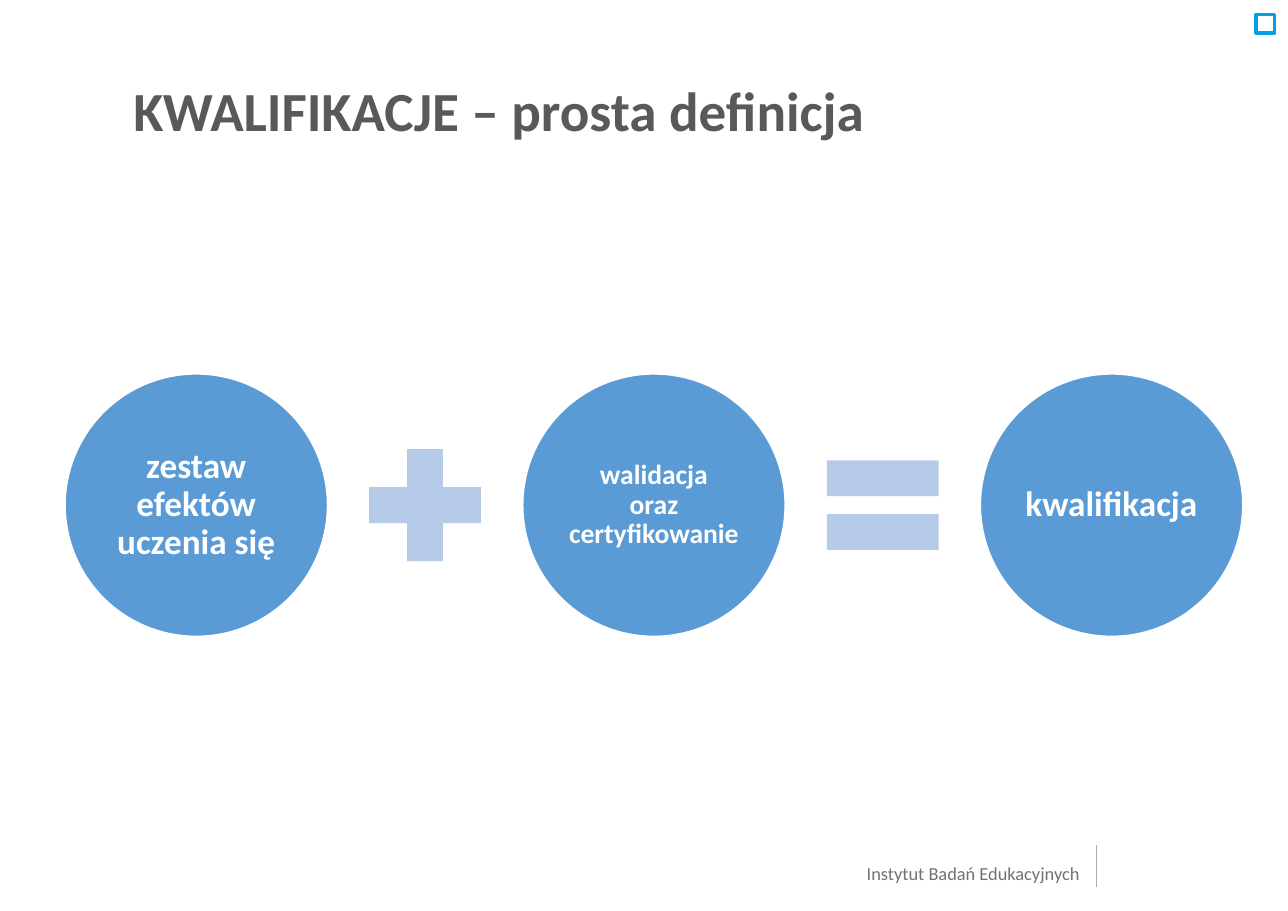
from dataclasses import dataclass

from pptx import Presentation
from pptx.dml.color import RGBColor
from pptx.enum.shapes import MSO_CONNECTOR, MSO_SHAPE
from pptx.enum.text import MSO_ANCHOR, MSO_AUTO_SIZE, PP_ALIGN
from pptx.oxml.ns import qn
from pptx.shapes.autoshape import Shape
from pptx.slide import Slide
from pptx.text.text import TextFrame
from pptx.util import Inches, Pt

OVAL, RECT = MSO_SHAPE.OVAL, MSO_SHAPE.RECTANGLE
PLUS, EQUAL = MSO_SHAPE.MATH_PLUS, MSO_SHAPE.MATH_EQUAL
LEFT, CENTER = PP_ALIGN.LEFT, PP_ALIGN.CENTER
TOP, MIDDLE = MSO_ANCHOR.TOP, MSO_ANCHOR.MIDDLE

FONT = "Calibri"
COLORS = {
    "title": "595959",
    "term": "5B9BD5",
    "sign": "B5CBE7",
    "white": "FFFFFF",
    "mark": "00A1E4",
    "footer": "767171",
    "rule": "AFABAB",
}

# Equation row: circles at an equal pitch, signs midway between them
START, PITCH, MID = 0.59, 4.15, 4.58
TERM, SIGN = 2.38, 1.38


@dataclass
class Term:
    lines: list[str]
    size: float


@dataclass
class Style:
    size: float
    color: str
    bold: bool = False
    align: PP_ALIGN = LEFT
    anchor: MSO_ANCHOR = TOP
    space: float = 0.9


TERMS = [
    Term(["zestaw efektów uczenia się"], 23),
    Term(["walidacja", "oraz", "certyfikowanie"], 18),
    Term(["kwalifikacja"], 23),
]
SIGNS = [PLUS, EQUAL]


def rgb(name: str) -> RGBColor:
    return RGBColor.from_string(COLORS[name])


def write(frame: TextFrame, lines: list[str], style: Style, wrap: bool = True) -> None:
    frame.word_wrap = wrap
    frame.auto_size = MSO_AUTO_SIZE.NONE
    frame.vertical_anchor = style.anchor
    frame.margin_left = frame.margin_right = 0
    frame.margin_top = frame.margin_bottom = 0
    para = frame.paragraphs[0]
    para.alignment = style.align
    para.line_spacing = style.space
    for i, line in enumerate(lines):
        if i:
            para.add_line_break()
        run = para.add_run()
        run.text = line
        run.font.name = FONT
        run.font.size = Pt(style.size)
        run.font.bold = style.bold
        run.font.color.rgb = rgb(style.color)


def draw(slide: Slide, kind: MSO_SHAPE, left: float, top: float, side: float,
         fill: str, line: str = "", width: float = 1) -> Shape:
    shape = slide.shapes.add_shape(
        kind, Inches(left), Inches(top), Inches(side), Inches(side))
    shape.shadow.inherit = False
    shape.fill.solid()
    shape.fill.fore_color.rgb = rgb(fill)
    if line:
        shape.line.color.rgb = rgb(line)
        shape.line.width = Pt(width)
    else:
        shape.line.fill.background()
    return shape


def add_title(slide: Slide) -> None:
    title = slide.shapes.title
    title.left, title.top = Inches(1.21), Inches(0.76)
    title.width, title.height = Inches(10.07), Inches(0.85)
    write(title.text_frame, ["KWALIFIKACJE – prosta definicja"],
          Style(36, "title", bold=True))


def add_sum(slide: Slide) -> None:
    for i, term in enumerate(TERMS):
        oval = draw(slide, OVAL, START + i * PITCH, MID - TERM / 2, TERM,
                    "term", "white")
        write(oval.text_frame, term.lines,
              Style(term.size, "white", True, CENTER, MIDDLE))
    first = START + (TERM + PITCH - SIGN) / 2
    for i, kind in enumerate(SIGNS):
        draw(slide, kind, first + i * PITCH, MID - SIGN / 2, SIGN, "sign")


def add_footer(slide: Slide) -> None:
    box = slide.shapes.add_textbox(
        Inches(7.86), Inches(7.82), Inches(1.95), Inches(0.21))
    write(box.text_frame, ["Instytut Badań Edukacyjnych"],
          Style(12, "footer", space=1.0), wrap=False)
    rule = slide.shapes.add_connector(
        MSO_CONNECTOR.STRAIGHT,
        Inches(9.94), Inches(7.66), Inches(9.94), Inches(8.04))
    rule.line.color.rgb = rgb("rule")
    rule.line.width = Pt(0.5)
    props = rule._element.spPr
    props.append(props.makeelement(qn("a:effectLst"), {}))


def main() -> None:
    deck = Presentation()
    deck.slide_width, deck.slide_height = Inches(11.68), Inches(8.26)
    slide = deck.slides.add_slide(deck.slide_layouts[5])
    add_footer(slide)
    add_title(slide)
    add_sum(slide)
    # Corner mark
    draw(slide, RECT, 11.39, 0.13, 0.17, "white", "mark", 2)
    deck.save("out.pptx")


if __name__ == "__main__":
    main()
